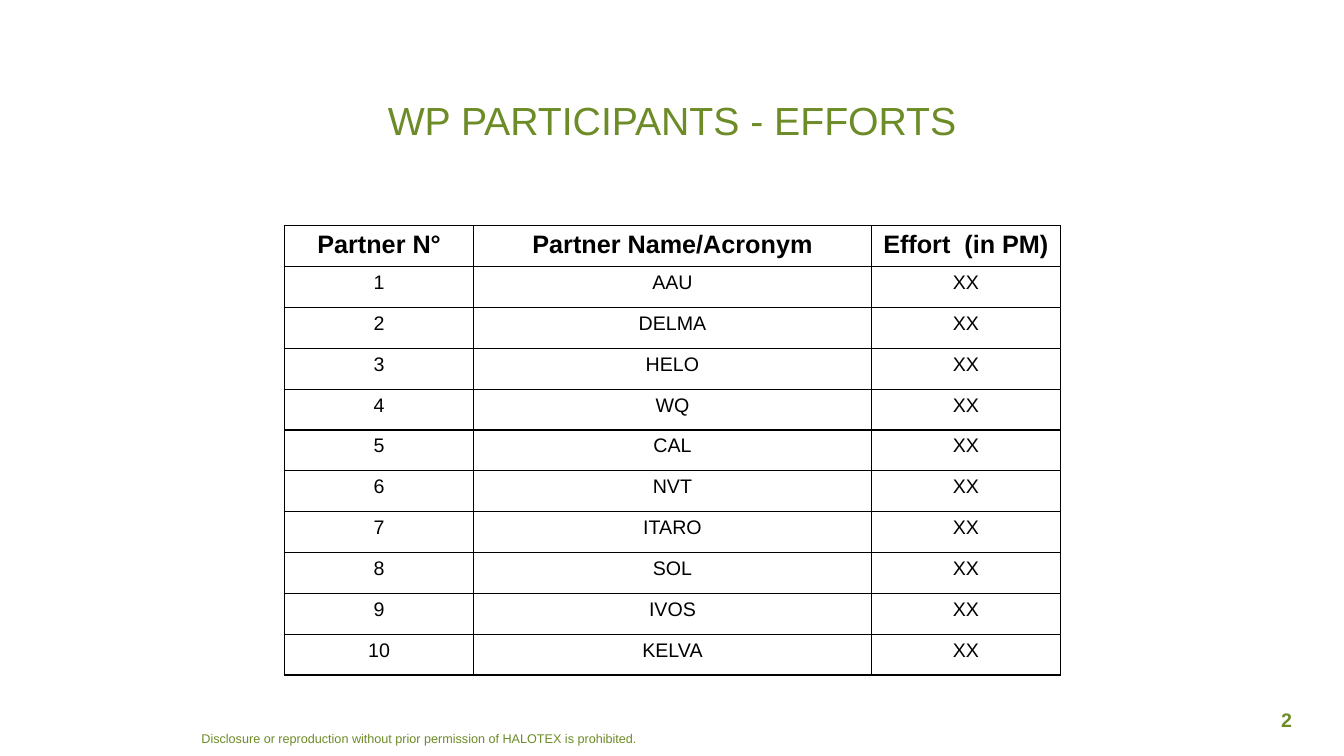
from dataclasses import dataclass

from lxml import etree
from pptx import Presentation
from pptx import util as u
from pptx.dml.color import RGBColor
from pptx.enum import text
from pptx.oxml import ns

SLIDE_W, SLIDE_H = 13.33, 7.5
GREEN, BLACK = "6D8C28", "000000"
FONT = "Arial"


@dataclass
class Label:
    words: str
    left: float  # left, top, width and height are shares of the slide
    top: float
    width: float
    height: float
    size: float
    align: text.PP_ALIGN = text.PP_ALIGN.CENTER
    bold: bool = False
    line_spacing: float = 1.0


LABELS = [
    Label("WP PARTICIPANTS - EFFORTS", 0.97 / SLIDE_W, 0.96 / SLIDE_H,
          11.39 / SLIDE_W, 0.69 / SLIDE_H, 28, line_spacing=0.9),
    Label("Disclosure or reproduction without prior permission of HALOTEX is prohibited.",
          1.9 / SLIDE_W, 7.2 / SLIDE_H, 5.17 / SLIDE_W, 0.4 / SLIDE_H, 9,
          align=text.PP_ALIGN.LEFT),
    Label("2", 12.38 / SLIDE_W, 6.97 / SLIDE_H, 0.76 / SLIDE_W, 0.4 / SLIDE_H,
          14, bold=True),
]

HEADER = ["Partner N°", "Partner Name/Acronym", "Effort  (in PM)"]
PARTNERS = ["AAU", "DELMA", "HELO", "WQ", "CAL", "NVT", "ITARO", "SOL", "IVOS", "KELVA"]
EFFORT = "XX"
TABLE_LEFT, TABLE_TOP, TABLE_HEIGHT = 2.82, 2.24, 4.46
COLUMN_WIDTHS = [1.88, 3.94, 1.88]


def color(value: str) -> RGBColor:
    return RGBColor.from_string(value)


def format_text(p, size: float, hex_color: str, bold: bool, align) -> None:
    p.alignment = align
    for r in p.runs:
        r.font.name = FONT
        r.font.size = u.Pt(size)
        r.font.bold = bold
        r.font.color.rgb = color(hex_color)


def draw_label(slide, label: Label) -> None:
    sp = slide.shapes.add_textbox(
        u.Inches(label.left * SLIDE_W), u.Inches(label.top * SLIDE_H),
        u.Inches(label.width * SLIDE_W), u.Inches(label.height * SLIDE_H))
    tf = sp.text_frame
    tf.word_wrap = True
    tf.text = label.words
    p = tf.paragraphs[0]
    p.line_spacing = label.line_spacing
    format_text(p, label.size, GREEN, label.bold, label.align)


def add_borders(cell) -> None:
    tc_pr = cell._tc.get_or_add_tcPr()
    for position, side in enumerate(("a:lnL", "a:lnR", "a:lnT", "a:lnB")):
        line = etree.Element(ns.qn(side), w=str(u.Pt(1)))
        fill = etree.SubElement(line, ns.qn("a:solidFill"))
        etree.SubElement(fill, ns.qn("a:srgbClr"), val=BLACK)
        tc_pr.insert(position, line)


def draw_table(slide, rows: list[list[str]]) -> None:
    frame = slide.shapes.add_table(
        len(rows), len(COLUMN_WIDTHS), u.Inches(TABLE_LEFT), u.Inches(TABLE_TOP),
        u.Inches(sum(COLUMN_WIDTHS)), u.Inches(TABLE_HEIGHT))
    table = frame.table
    table.first_row = table.horz_banding = False
    for column, width in zip(table.columns, COLUMN_WIDTHS):
        column.width = u.Inches(width)
    for i, row in enumerate(rows):
        is_header = i == 0
        for j, words in enumerate(row):
            cell = table.cell(i, j)
            cell.fill.background()
            add_borders(cell)
            cell.text_frame.text = words
            format_text(cell.text_frame.paragraphs[0], 18 if is_header else 14,
                        BLACK, is_header, text.PP_ALIGN.CENTER)


def main() -> None:
    prs = Presentation()
    prs.slide_width, prs.slide_height = u.Inches(SLIDE_W), u.Inches(SLIDE_H)
    slide = prs.slides.add_slide(prs.slide_layouts[6])

    # Title, footer and page number
    for label in LABELS:
        draw_label(slide, label)

    # Partner efforts
    draw_table(slide, [HEADER] + [[str(n), name, EFFORT]
                                  for n, name in enumerate(PARTNERS, start=1)])

    prs.save("out.pptx")


if __name__ == "__main__":
    main()
